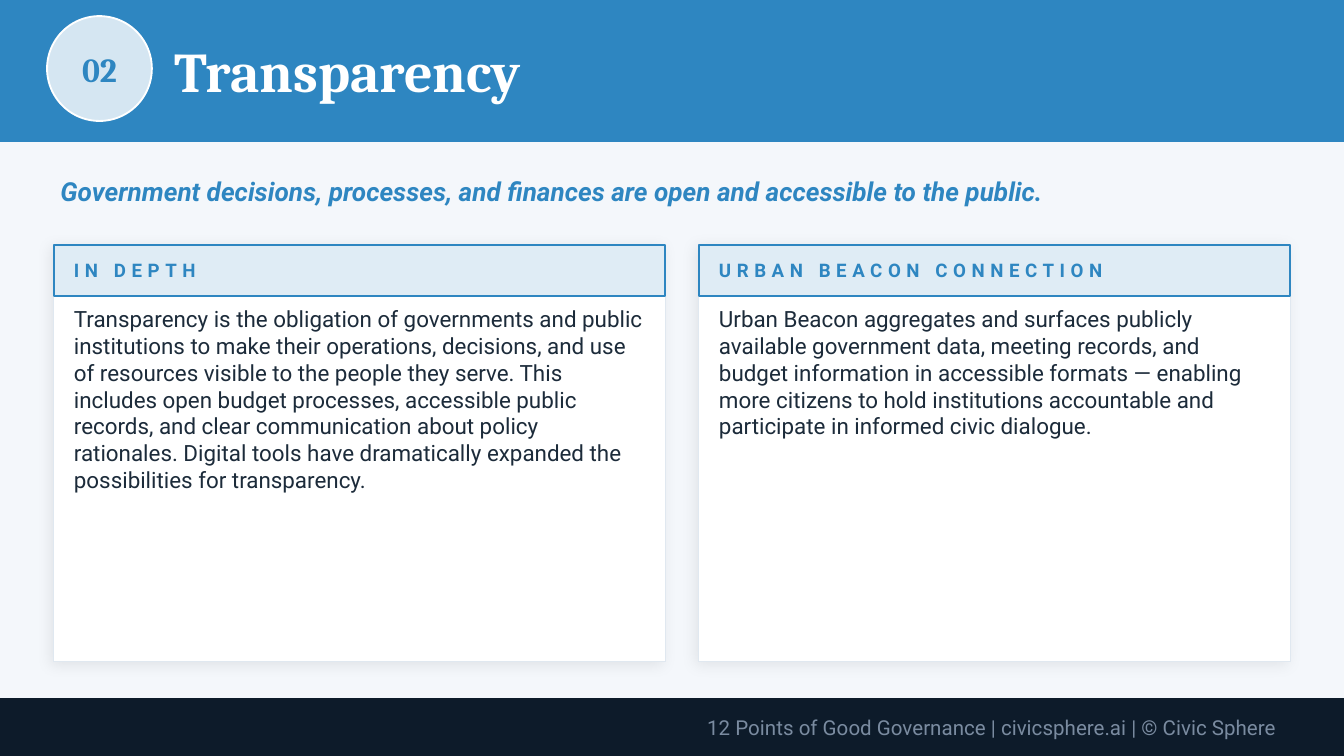
"""Build the Transparency slide on good governance."""
from dataclasses import dataclass
from typing import Optional

import pptx
import pptx.dml.color
import pptx.enum.shapes
import pptx.enum.text
import pptx.oxml
import pptx.oxml.ns
import pptx.util
from lxml import etree

Pt = pptx.util.Pt
RGB = pptx.dml.color.RGBColor
Kind = pptx.enum.shapes.MSO_SHAPE
Align = pptx.enum.text.PP_ALIGN
Anchor = pptx.enum.text.MSO_ANCHOR
qn = pptx.oxml.ns.qn

BLUE = RGB(0x2E, 0x86, 0xC1)
WHITE = RGB(0xFF, 0xFF, 0xFF)
PALE = RGB(0xF4, 0xF7, 0xFB)
EDGE = RGB(0xE0, 0xE8, 0xF0)
INK = RGB(0x1C, 0x2B, 0x3A)
NAVY = RGB(0x0D, 0x1B, 0x2A)
GREY = RGB(0x7A, 0x8B, 0xA0)
SERIF, SANS = "Cambria", "Roboto"
CARD_TOP, CARD_TALL, BAR_TALL, PAD = 131.04, 223.2, 27.36, 10.8


@dataclass
class Box:
    left: float
    top: float
    width: float
    height: float

    def lengths(self) -> list:
        return [Pt(n) for n in (self.left, self.top, self.width, self.height)]


@dataclass
class Style:
    size: float
    color: RGB
    face: str = SANS
    bold: bool = False
    italic: bool = False
    align: Align = Align.LEFT
    anchor: Anchor = Anchor.MIDDLE
    gap: int = 0


@dataclass
class Card:
    left: float
    width: float
    head: str
    body: str


NUMBER = Style(18, BLUE, SERIF, bold=True, align=Align.CENTER)
TITLE = Style(30, WHITE, SERIF, bold=True)
LEAD = Style(14, BLUE, bold=True, italic=True)
HEAD = Style(10, BLUE, bold=True, gap=3)
BODY = Style(12, INK, anchor=Anchor.TOP)
FOOT = Style(11, GREY, align=Align.RIGHT)

CARDS = [
    Card(28.8, 327.6, "IN DEPTH",
         "Transparency is the obligation of governments and public institutions "
         "to make their operations, decisions, and use of resources visible to "
         "the people they serve. This includes open budget processes, accessible "
         "public records, and clear communication about policy rationales. "
         "Digital tools have dramatically expanded the possibilities for "
         "transparency."),
    Card(374.4, 316.8, "URBAN BEACON CONNECTION",
         "Urban Beacon aggregates and surfaces publicly available government "
         "data, meeting records, and budget information in accessible formats — "
         "enabling more citizens to hold institutions accountable and "
         "participate in informed civic dialogue."),
]


def format_text(shape, text: str, style: Style) -> None:
    frame = shape.text_frame
    frame.text = text
    frame.word_wrap = True
    frame.auto_size = pptx.enum.text.MSO_AUTO_SIZE.NONE
    frame.vertical_anchor = style.anchor
    frame.margin_left = frame.margin_right = 0
    frame.margin_top = frame.margin_bottom = 0
    line = frame.paragraphs[0]
    line.alignment = style.align
    font = line.font
    font.name, font.size = style.face, Pt(style.size)
    font.bold, font.italic = style.bold, style.italic
    font.color.rgb = style.color
    if style.gap:
        font._element.set("spc", str(style.gap * 100))


def write(slide, box: Box, text: str, style: Style) -> None:
    format_text(slide.shapes.add_textbox(*box.lengths()), text, style)


def draw(slide, box: Box, fill: RGB, edge: RGB, weight: float = 1,
         kind: Kind = Kind.RECTANGLE, alpha: Optional[int] = None):
    shape = slide.shapes.add_shape(kind, *box.lengths())
    shape.shadow.inherit = False
    shape.fill.solid()
    shape.fill.fore_color.rgb = fill
    shape.line.color.rgb = edge
    shape.line.width = Pt(weight)
    if alpha is not None:
        color = shape._element.spPr.find(qn("a:solidFill"))[0]
        etree.SubElement(color, qn("a:alpha"), val=str(alpha * 1000))
    return shape


def add_shadow(shape) -> None:
    effects = shape._element.spPr.find(qn("a:effectLst"))
    shadow = etree.SubElement(
        effects, qn("a:outerShdw"), blurRad=str(Pt(8)), dist=str(Pt(2)),
        dir=str(135 * 60000), algn="bl", rotWithShape="0")
    color = etree.SubElement(shadow, qn("a:srgbClr"), val="000000")
    etree.SubElement(color, qn("a:alpha"), val="8000")


def draw_card(slide, card: Card) -> None:
    panel = Box(card.left, CARD_TOP, card.width, CARD_TALL)
    add_shadow(draw(slide, panel, WHITE, EDGE, 0.5))
    bar = Box(card.left, CARD_TOP, card.width, BAR_TALL)
    draw(slide, bar, BLUE, BLUE, alpha=15)
    left, width = card.left + PAD, card.width - 2 * PAD
    write(slide, Box(left, 133.2, width, 23.04), card.head, HEAD)
    write(slide, Box(left, 163.44, width, 183.6), card.body, BODY)


def main() -> None:
    deck = pptx.Presentation()
    deck.slide_width, deck.slide_height = Pt(720), Pt(405)
    slide = deck.slides.add_slide(deck.slide_layouts[5])
    slide.background.fill.solid()
    slide.background.fill.fore_color.rgb = PALE

    draw(slide, Box(0, 0, 720, 75.6), BLUE, BLUE)
    badge = Box(25.2, 8.64, 56.16, 56.16)
    draw(slide, badge, WHITE, WHITE, kind=Kind.OVAL, alpha=80)
    write(slide, badge, "02", NUMBER)

    title = slide.shapes.title
    title.left, title.top, title.width, title.height = Box(
        93.6, 7.2, 597.6, 61.2).lengths()
    format_text(title, "Transparency", TITLE)
    title._element.getparent().append(title._element)

    write(slide, Box(32.4, 82.8, 655.2, 39.6),
          "Government decisions, processes, and finances are open and "
          "accessible to the public.", LEAD)
    for card in CARDS:
        draw_card(slide, card)

    draw(slide, Box(0, 374.4, 720, 30.24), NAVY, NAVY)
    write(slide, Box(36, 375.84, 648, 27.36),
          "12 Points of Good Governance | civicsphere.ai | © Civic Sphere",
          FOOT)
    deck.save("out.pptx")


if __name__ == "__main__":
    main()
